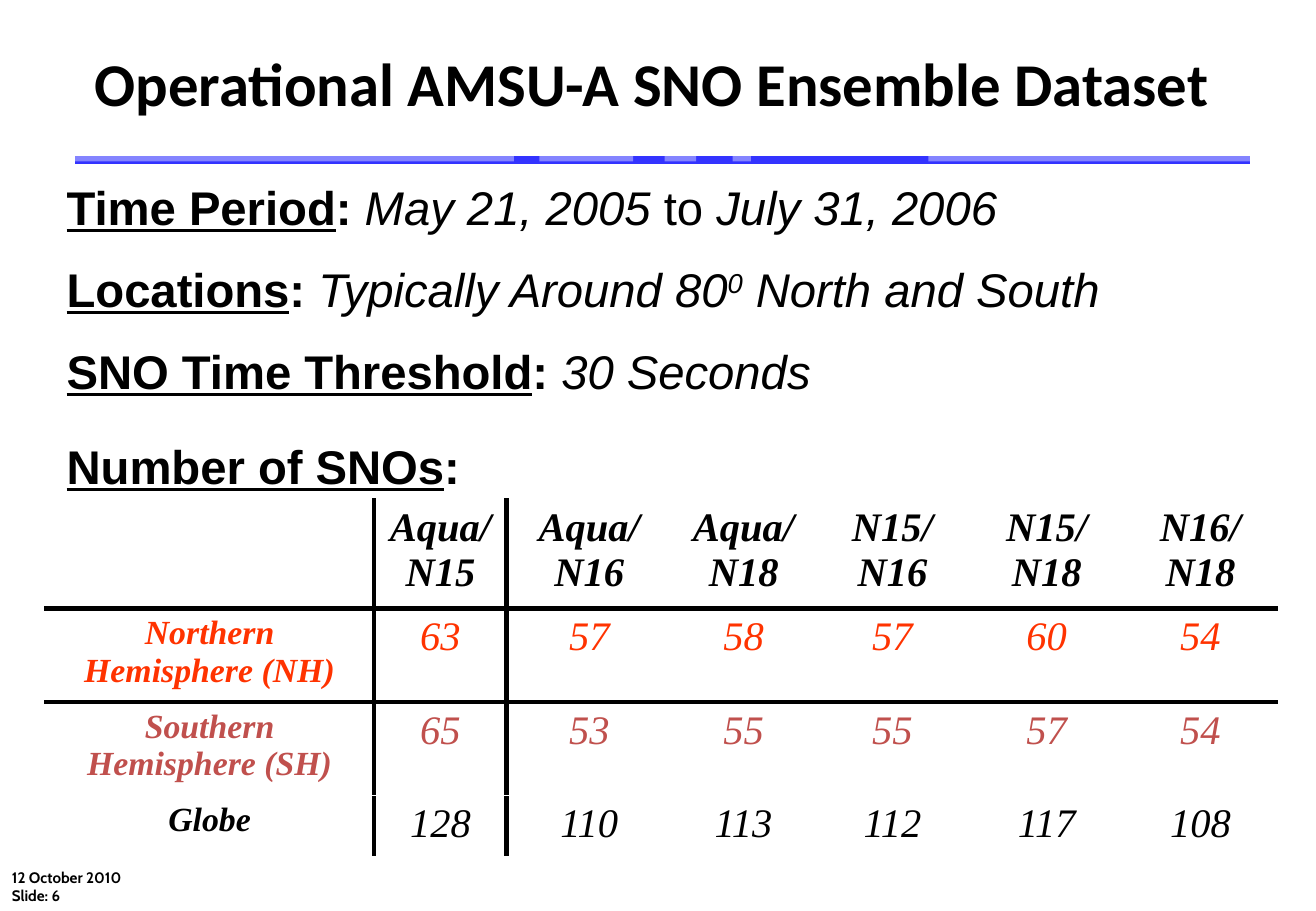
from lxml.etree import SubElement
from pptx import Presentation
from pptx.dml.color import RGBColor
from pptx.enum.shapes import MSO_CONNECTOR, MSO_SHAPE
from pptx.enum.text import MSO_ANCHOR, PP_ALIGN
from pptx.oxml.ns import qn
from pptx.util import Inches, Pt

BLACK = "000000"
LABEL = {"bold": True, "underline": True}
BOLD = {"bold": True}
ITALIC = {"italic": True}

FACTS = [
    [("Time Period", LABEL), (": ", BOLD), ("May 21, 2005", ITALIC), (" to ", {}),
     ("July 31, 2006", ITALIC)],
    [("Locations", LABEL), (": ", BOLD), ("Typically Around 80", ITALIC),
     ("0", {"italic": True, "superscript": True}), (" North and South", ITALIC)],
    [("SNO Time Threshold", LABEL), (": ", BOLD), ("30 Seconds", ITALIC)],
]
COUNT_HEADING = [[("Number of SNOs", LABEL), (":", BOLD)]]
FOOTER = [[("12 October 2010", BOLD)], [("Slide: 6", BOLD)]]

COUNTS = [
    (BLACK, ["", "Aqua/ N15", "Aqua/ N16", "Aqua/ N18", "N15/ N16", "N15/ N18", "N16/ N18"]),
    ("FF3300", ["Northern Hemisphere (NH)", "63", "57", "58", "57", "60", "54"]),
    ("C0504D", ["Southern Hemisphere (SH)", "65", "53", "55", "55", "57", "54"]),
    (BLACK, ["Globe", "128", "110", "113", "112", "117", "108"]),
]
COL_WIDTHS = [2.71, 1.09, 1.36, 1.18, 1.27, 1.27, 1.26]
ROW_HEIGHTS = [0.89, 0.77, 0.77, 0.5]


def rgb(color):
    return RGBColor.from_string(color)


def set_font(font, name, size, color=BLACK):
    font.name = name
    font.size = Pt(size)
    font.color.rgb = rgb(color)


def add_title(s, text):
    title = s.shapes.title
    title.left, title.top = Inches(0.4), Inches(0.32)
    title.width, title.height = Inches(9.93), Inches(0.71)
    tf = title.text_frame
    tf.text = text
    tf.vertical_anchor = MSO_ANCHOR.MIDDLE
    p = tf.paragraphs[0]
    p.alignment = PP_ALIGN.CENTER
    set_font(p.font, "Calibri", 36)
    p.font.bold = True


def add_text(s, left, top, width, height, paragraphs, name, size, gap=0):
    box = s.shapes.add_textbox(Inches(left), Inches(top), Inches(width), Inches(height))
    tf = box.text_frame
    tf.word_wrap = True
    for i, runs in enumerate(paragraphs):
        p = tf.add_paragraph() if i else tf.paragraphs[0]
        p.space_before = Pt(gap if i else 0)
        set_font(p.font, name, size)
        for text, style in runs:
            r = p.add_run()
            r.text = text
            r.font.bold = style.get("bold", False)
            r.font.italic = style.get("italic", False)
            r.font.underline = style.get("underline", False)
            if style.get("superscript"):
                r.font._element.set("baseline", "30000")


def add_rule(s):
    line = s.shapes.add_connector(MSO_CONNECTOR.STRAIGHT, Inches(0.62), Inches(1.32),
                                  Inches(10.29), Inches(1.32))
    line.line.color.rgb = rgb("3333FF")
    line.line.width = Pt(4.5)
    SubElement(line._element.spPr, qn("a:effectLst"))


def add_veil(s, left, width):
    veil = s.shapes.add_shape(MSO_SHAPE.RECTANGLE, Inches(left), Inches(1.19),
                              Inches(width), Inches(0.14))
    veil.shadow.inherit = False
    veil.line.fill.background()
    veil.fill.solid()
    veil.fill.fore_color.rgb = rgb("FFFFFF")
    color = veil._element.spPr.find(qn("a:solidFill"))[0]
    SubElement(color, qn("a:alpha"), val="40000")


def add_border(cell, side):
    ln = SubElement(cell._tc.get_or_add_tcPr(), qn(f"a:ln{side}"), w=str(Pt(3)))
    fill = SubElement(ln, qn("a:solidFill"))
    SubElement(fill, qn("a:srgbClr"), val=BLACK)


def add_counts(s):
    table = s.shapes.add_table(len(COUNTS), len(COL_WIDTHS), Inches(0.37), Inches(4.11),
                               Inches(sum(COL_WIDTHS)), Inches(sum(ROW_HEIGHTS))).table
    table.first_row = table.horz_banding = False
    for col, width in zip(table.columns, COL_WIDTHS):
        col.width = Inches(width)
    for row, height in zip(table.rows, ROW_HEIGHTS):
        row.height = Inches(height)
    for i, (color, values) in enumerate(COUNTS):
        for j, value in enumerate(values):
            cell = table.cell(i, j)
            # Rules beside the first column and under the header
            edges = {"L": j == 1, "R": j == 0, "T": i == 1, "B": i == 0}
            for side, drawn in edges.items():
                if drawn:
                    add_border(cell, side)
            cell.fill.background()
            cell.margin_left = cell.margin_right = Inches(0.11)
            cell.text = value
            p = cell.text_frame.paragraphs[0]
            p.alignment = PP_ALIGN.CENTER
            set_font(p.font, "Times New Roman", 20 if i and j == 0 else 24, color)
            p.font.bold = i == 0 or j == 0
            p.font.italic = True


def main():
    prs = Presentation()
    prs.slide_width, prs.slide_height = Inches(10.83), Inches(7.5)
    s = prs.slides.add_slide(prs.slide_layouts[5])

    # Title and the rule below it, lightened in places
    add_title(s, "Operational AMSU-A SNO Ensemble Dataset")
    add_rule(s)
    for left, width in [(0.01, 4.22), (4.44, 0.77), (5.47, 0.26), (6.03, 0.15), (7.64, 3.19)]:
        add_veil(s, left, width)

    # Dataset facts
    add_text(s, 0.45, 1.42, 9.75, 1.97, FACTS, "Arial", 28, gap=15)

    # Counts
    add_text(s, 0.45, 3.55, 6.95, 0.57, COUNT_HEADING, "Arial", 28)
    add_counts(s)

    # Footer
    add_text(s, 0, 7.1, 6.86, 0.4, FOOTER, "Cabin", 9)

    prs.save("out.pptx")


if __name__ == "__main__":
    main()
